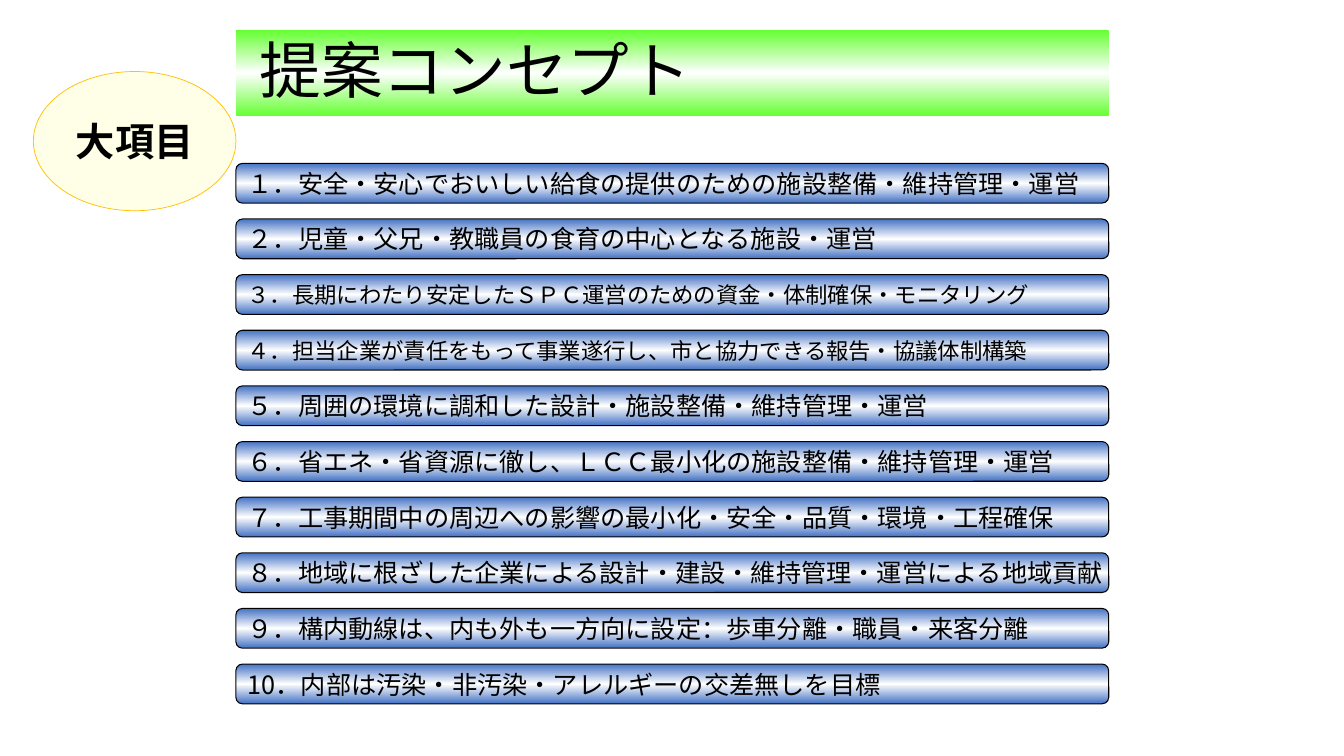
from copy import deepcopy

from lxml.etree import SubElement
from pptx import Presentation
from pptx.dml.color import RGBColor
from pptx.enum.shapes import MSO_SHAPE as Preset
from pptx.enum.text import MSO_ANCHOR as Anchor, MSO_AUTO_SIZE as AutoSize, PP_ALIGN as Align
from pptx.oxml.ns import qn
from pptx.util import Pt

FONT = "Noto Sans CJK JP"
BLACK = RGBColor(0, 0, 0)
WHITE = RGBColor(0xFF, 0xFF, 0xFF)
GREEN = RGBColor(0x66, 0xFF, 0x33)
BLUE = RGBColor(0x44, 0x72, 0xC4)
CREAM = RGBColor(0xFF, 0xFF, 0xCC)
AMBER = RGBColor(0xFF, 0xC0, 0x00)

COLUMN_LEFT = 168.5
COLUMN_WIDTH = 623.5
FIRST_TOP = 116.7
PITCH = 39.74
BAR_HEIGHT = 28.4

CONCEPTS = [
    ("１．安全・安心でおいしい給食の提供のための施設整備・維持管理・運営", 18),
    ("２．児童・父兄・教職員の食育の中心となる施設・運営", 18),
    ("３．長期にわたり安定したＳＰＣ運営のための資金・体制確保・モニタリング", 16),
    ("４．担当企業が責任をもって事業遂行し、市と協力できる報告・協議体制構築", 16),
    ("５．周囲の環境に調和した設計・施設整備・維持管理・運営", 18),
    ("６．省エネ・省資源に徹し、ＬＣＣ最小化の施設整備・維持管理・運営", 18),
    ("７．工事期間中の周辺への影響の最小化・安全・品質・環境・工程確保", 18),
    ("８．地域に根ざした企業による設計・建設・維持管理・運営による地域貢献", 18),
    ("９．構内動線は、内も外も一方向に設定：歩車分離・職員・来客分離", 18),
    ("10．内部は汚染・非汚染・アレルギーの交差無しを目標", 18),
]


class ConceptSlide:
    def __init__(self, deck):
        self.slide = deck.slides.add_slide(deck.slide_layouts[5])

    def label(self, shape, text, size, align=Align.LEFT, bold=False, wrap=True):
        frame = shape.text_frame
        frame.text = text
        frame.word_wrap = wrap
        frame.auto_size = AutoSize.NONE
        frame.vertical_anchor = Anchor.MIDDLE
        paragraph = frame.paragraphs[0]
        paragraph.alignment = align
        font = paragraph.font
        font.size, font.bold, font.name = Pt(size), bold, FONT
        font.color.rgb = BLACK
        defaults = paragraph._p.pPr.find(qn("a:defRPr"))
        SubElement(defaults, qn("a:ea"), typeface=FONT)
        return paragraph

    def shade(self, shape, edge):
        fill = shape.fill
        fill.gradient()
        fill.gradient_angle = 90
        for stop in fill.gradient_stops:
            stop.color.rgb = edge
        first = shape._element.spPr.find(".//" + qn("a:gs"))
        first.addnext(deepcopy(first))
        middle = fill.gradient_stops[1]
        middle.position = 0.5
        middle.color.rgb = WHITE

    def outlined(self, preset, left, top, width, height, color, weight):
        shape = self.slide.shapes.add_shape(
            preset, Pt(left), Pt(top), Pt(width), Pt(height))
        shape.shadow.inherit = False
        shape.line.color.rgb = color
        shape.line.width = Pt(weight)
        return shape

    def title(self, text):
        banner = self.slide.shapes.title
        banner.left, banner.top = Pt(COLUMN_LEFT), Pt(21.6)
        banner.width, banner.height = Pt(COLUMN_WIDTH), Pt(61.2)
        self.shade(banner, GREEN)
        self.label(banner, text, 44).line_spacing = 0.9

    def bar(self, top, text, size):
        bar = self.outlined(Preset.ROUNDED_RECTANGLE, COLUMN_LEFT, top,
                            COLUMN_WIDTH, BAR_HEIGHT, BLACK, 0.75)
        self.shade(bar, BLUE)
        self.label(bar, text, size, wrap=False)

    def badge(self, text):
        badge = self.outlined(Preset.OVAL, 23.8, 51.1, 144.7, 99.4, AMBER, 0.5)
        badge.fill.solid()
        badge.fill.fore_color.rgb = CREAM
        cream = badge._element.spPr.find(qn("a:solidFill"))[0]
        SubElement(cream, qn("a:alpha"), val="47000")
        self.label(badge, text, 28, Align.CENTER, bold=True)


def main():
    deck = Presentation()
    deck.slide_width, deck.slide_height = Pt(960), Pt(540)
    page = ConceptSlide(deck)
    page.title(" 提案コンセプト")
    for row, (concept, size) in enumerate(CONCEPTS):
        page.bar(FIRST_TOP + row * PITCH, concept, size)
    page.badge("大項目")
    deck.save("out.pptx")


if __name__ == "__main__":
    main()
